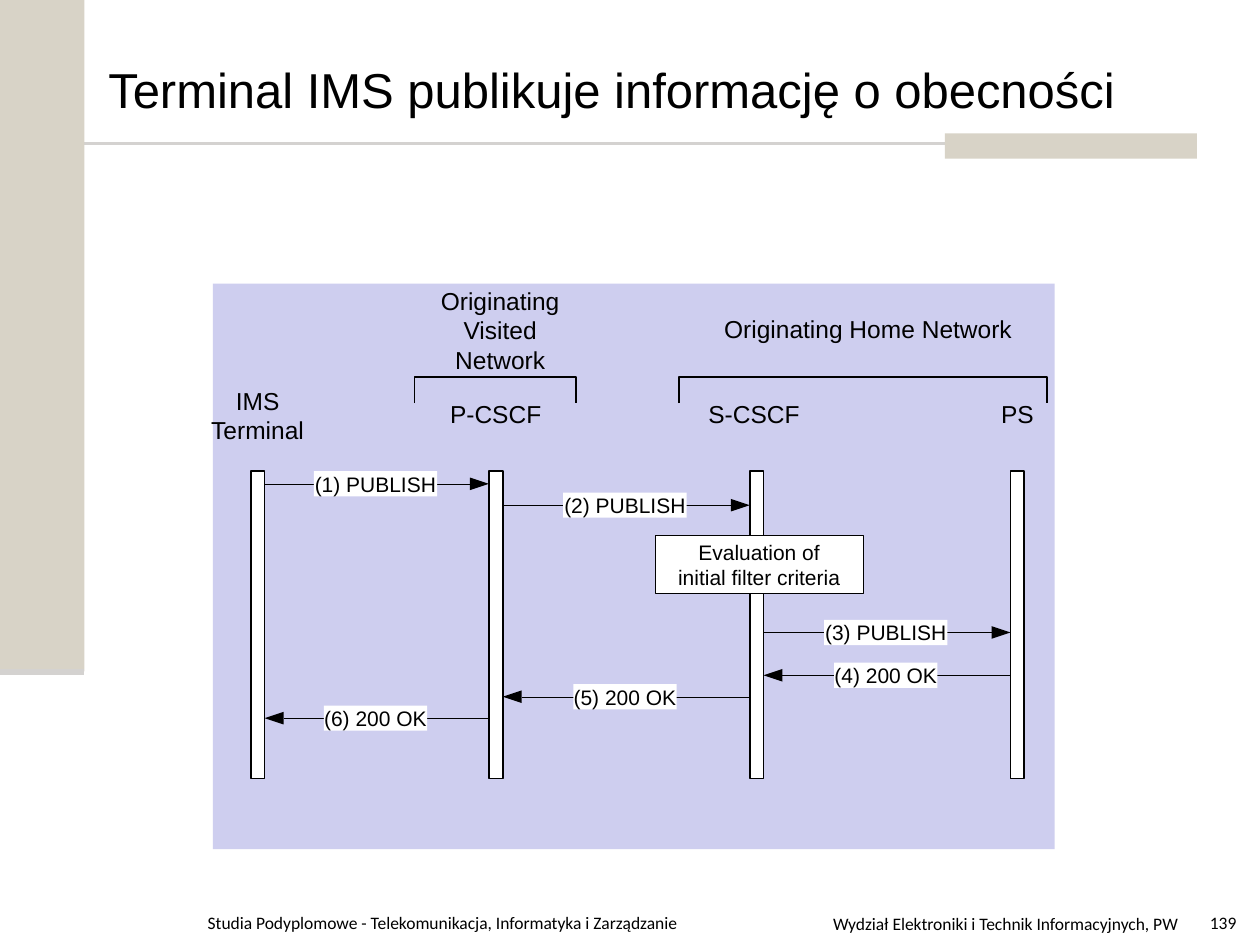
from dataclasses import dataclass
from pptx import Presentation
from pptx.dml.color import RGBColor
from pptx.enum.shapes import MSO_CONNECTOR, MSO_SHAPE
from pptx.enum.text import MSO_ANCHOR, PP_ALIGN
from pptx.oxml.ns import qn
from pptx.util import Pt
from lxml.etree import SubElement

PX = 9144


@dataclass(frozen=True)
class Theme:
    ink: str = "000000"
    white: str = "FFFFFF"
    sand: str = "D8D3C7"
    rule: str = "D4D2D0"
    panel: str = "CECEEF"
    sans: str = "Arial"
    foot: str = "Calibri"
    title: int = 28
    head: int = 14
    note: int = 12
    small: int = 10
    thin: float = 0.25
    bold: float = 1


T = Theme()


def emu(*nums):
    return [round(n * PX) for n in nums]


def paint(shape, fill=None, line=None, width=T.bold):
    shape.shadow.inherit = False
    if fill:
        shape.fill.solid()
        shape.fill.fore_color.rgb = RGBColor.from_string(fill)
    else:
        shape.fill.background()
    if line:
        shape.line.color.rgb = RGBColor.from_string(line)
        shape.line.width = Pt(width)
    else:
        shape.line.fill.background()
    return shape


def rect(slide, box, **style):
    shape = slide.shapes.add_shape(MSO_SHAPE.RECTANGLE, *emu(*box))
    return paint(shape, **style)


def stroke(slide, start, end, color, width):
    line = slide.shapes.add_connector(MSO_CONNECTOR.STRAIGHT, *emu(*start, *end))
    line.line.color.rgb = RGBColor.from_string(color)
    line.line.width = Pt(width)
    SubElement(line._element.spPr, qn("a:effectLst"))


def outline(slide, points, close, **style):
    pen = slide.shapes.build_freeform(*points[0], scale=PX)
    pen.add_line_segments(points[1:], close=close)
    return paint(pen.convert_to_shape(), **style)


def write(slide, text, box=None, shape=None, size=T.head, font=T.sans,
          align=PP_ALIGN.CENTER, anchor=MSO_ANCHOR.TOP, pad=(0, 0)):
    if shape is None:
        shape = slide.shapes.add_textbox(*emu(*box))
    frame = shape.text_frame
    frame.word_wrap = True
    frame.vertical_anchor = anchor
    frame.margin_left = frame.margin_right = pad[0] * PX
    frame.margin_top = frame.margin_bottom = pad[1] * PX
    frame.text = text
    for para in frame.paragraphs:
        para.alignment = align
        para.font.size = Pt(size)
        para.font.name = font
        para.font.color.rgb = RGBColor.from_string(T.ink)


def frame(slide, box):
    left, top, wide, high = box
    stroke(slide, (left + 42, top + 114), (left + 950, top + 114), T.rule, 1.5)
    rect(slide, (left, top, 67, 533), fill=T.sand)
    rect(slide, (left + 750, top + 106, 200, 20), fill=T.sand)
    stroke(slide, (left, top + 533), (left + 67, top + 533), T.rule, 3.5)


def title(slide, box):
    shape = slide.shapes.title
    shape.left, shape.top, shape.width, shape.height = emu(*box)
    write(slide, "Terminal IMS publikuje informację o obecności", shape=shape,
          size=T.title, align=PP_ALIGN.LEFT, anchor=MSO_ANCHOR.MIDDLE, pad=(10, 5))


def group(slide, box, text, rise):
    left, top, wide, high = box
    low, right = top + high, left + wide
    outline(slide, [(left, low), (left, top), (right, top), (right, low)],
            False, line=T.ink)
    write(slide, text, (left + 4, top - rise, wide, rise))


def message(slide, start, end, y, text, wide):
    way = 1 if end > start else -1
    neck = end - 15 * way
    stroke(slide, (start, y), (neck, y), T.ink, T.thin)
    outline(slide, [(neck, y - 5), (end, y), (neck, y + 5)], True, fill=T.ink)
    mid = (start + end) / 2
    label = rect(slide, (mid - wide / 2 - 1, y - 10, wide, 20), fill=T.white)
    write(slide, text, shape=label, size=T.note)


def diagram(slide, box):
    left, top, wide, high = box
    rect(slide, box, fill=T.panel)
    thick = 11
    lanes = [left + x for x in (30, 219, 426, 633)]
    heads = [("IMS\nTerminal", 81, 0), ("P-CSCF", 92, 0),
             ("S-CSCF", 92, -2), ("PS", 92, 0)]
    for lane, (text, y, shift) in zip(lanes, heads):
        rect(slide, (lane, top + 149, thick, 244), fill=T.white, line=T.ink)
        write(slide, text, (lane + thick / 2 - 50 + shift, top + y, 100, 48))
    group(slide, (left + 160, top + 74, 128, 21), "Originating\nVisited\nNetwork", 72)
    group(slide, (left + 370, top + 74, 292, 21), "Originating Home Network", 50)
    flow = [(0, 1, 159, "PUBLISH"), (1, 2, 176, "PUBLISH"), (2, 3, 277, "PUBLISH"),
            (3, 2, 311, "200 OK"), (2, 1, 328, "200 OK"), (1, 0, 345, "200 OK")]
    for num, (src, dst, y, name) in enumerate(flow, 1):
        start = lanes[src] + (thick if src < dst else 0)
        end = lanes[dst] + (thick if src > dst else 0)
        message(slide, start, end, top + y, f"({num}) {name}",
                98 if name == "PUBLISH" else 82)
    check = rect(slide, (left + 351, top + 200, 165, 46),
                 fill=T.white, line=T.ink, width=T.thin)
    write(slide, "Evaluation of\ninitial filter criteria", shape=check,
          size=T.note, anchor=MSO_ANCHOR.MIDDLE)


def footer(slide, box):
    left, top, wide, high = box
    parts = [
        ("Studia Podyplomowe - Telekomunikacja, Informatyka i Zarządzanie",
         0, 0, 525, PP_ALIGN.LEFT),
        ("Wydział Elektroniki i Technik Informacyjnych, PW",
         443, 1, 400, PP_ALIGN.CENTER),
        ("139", 754, 0, 82, PP_ALIGN.RIGHT),
    ]
    for text, x, y, span, align in parts:
        write(slide, text, (left + x, top + y, span, high), size=T.small,
              font=T.foot, align=align, pad=(10, 5))


def main():
    deck = Presentation()
    deck.slide_width, deck.slide_height = emu(1000, 750)
    slide = deck.slides.add_slide(deck.slide_layouts[5])
    frame(slide, (0, 0, 1000, 750))
    diagram(slide, (169, 225, 668, 449))
    title(slide, (76, 42, 856, 57))
    footer(slide, (155, 719, 836, 30))
    deck.save("out.pptx")


if __name__ == "__main__":
    main()
